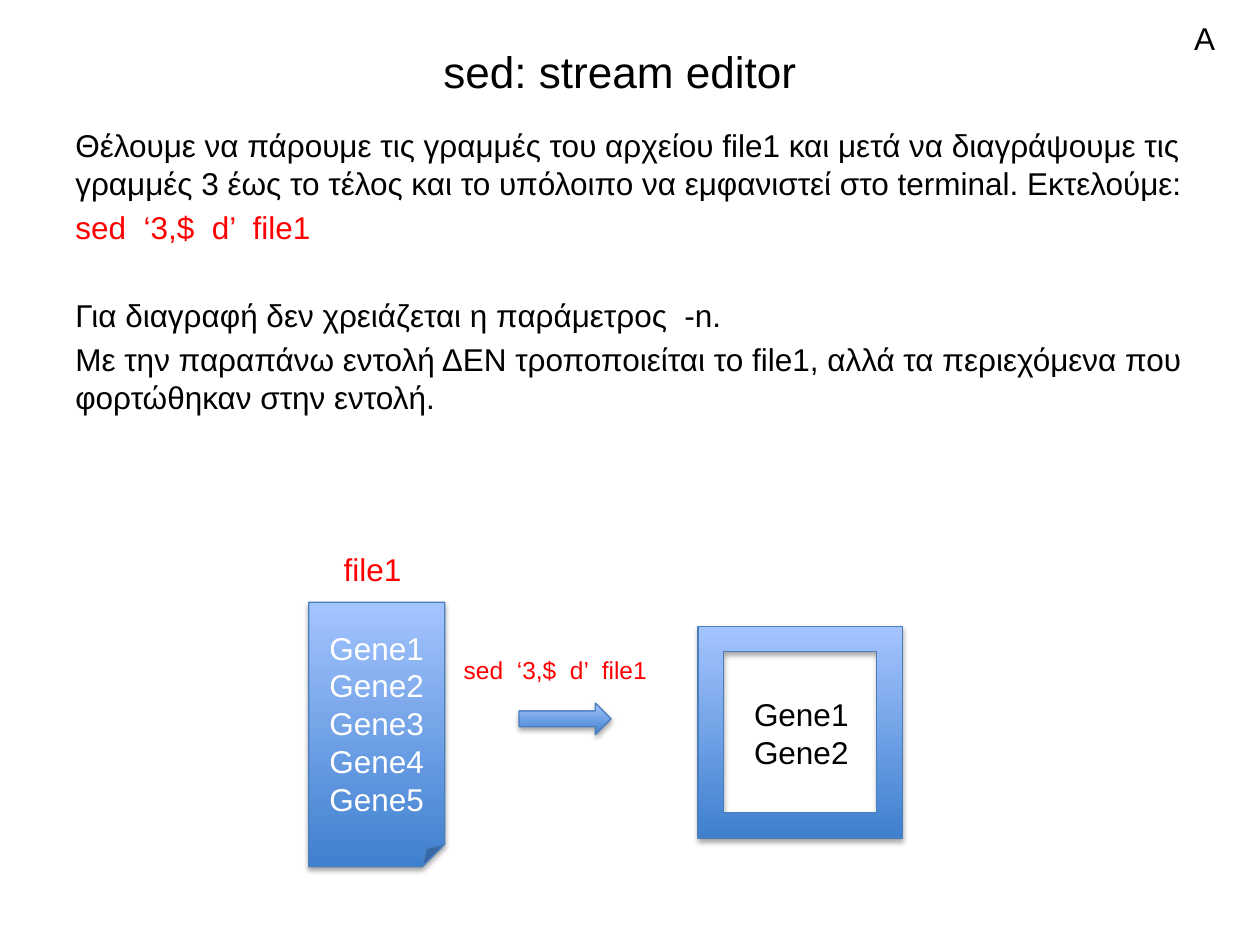
from dataclasses import dataclass

from lxml import etree
from pptx import Presentation
from pptx.dml.color import RGBColor
from pptx.enum.shapes import MSO_SHAPE
from pptx.enum.text import MSO_ANCHOR, PP_ALIGN
from pptx.oxml.ns import qn
from pptx.util import Inches, Pt

LEFT, CENTER = PP_ALIGN.LEFT, PP_ALIGN.CENTER
TOP, MIDDLE = MSO_ANCHOR.TOP, MSO_ANCHOR.MIDDLE
FOLDED, ARROW, FRAME = MSO_SHAPE.FOLDED_CORNER, MSO_SHAPE.RIGHT_ARROW, MSO_SHAPE.FRAME

FONT = "Arial"
COLS, ROWS = 100, 75
COLORS = {
    "black": "000000",
    "red": "FF0000",
    "white": "FFFFFF",
    "dark": "3F80CE",
    "light": "A4C4FF",
    "outline": "4B7EBC",
}
COMMAND = "sed  ‘3,$  d’  file1"
GENES = [f"Gene{n}" for n in range(1, 6)]
PARA_GAP = 3.6
SECTION_GAP = 29


@dataclass
class Box:
    col: float
    row: float
    cols: float
    rows: float


@dataclass
class Para:
    text: str
    color: str = "black"
    size: float = 18
    align: PP_ALIGN = LEFT
    before: float = 0


@dataclass
class Label:
    box: Box
    paras: list[Para]
    anchor: MSO_ANCHOR = TOP
    wrap: bool = True
    inset: float = 0.1


@dataclass
class Figure:
    kind: MSO_SHAPE
    box: Box
    paras: list[Para]


def gene_list(count: int, color: str) -> list[Para]:
    return [Para(g, color, align=CENTER) for g in GENES[:count]]


LABELS = [
    Label(Box(12, 3, 74.4, 5.2), [Para("sed: stream editor", size=25.2, align=CENTER)], MIDDLE),
    Label(Box(5, 9.5, 90, 26.7), [
        Para("Θέλουμε να πάρουμε τις γραμμές του αρχείου file1 και μετά να διαγράψουμε "
             "τις γραμμές 3 έως το τέλος και το υπόλοιπο να εμφανιστεί στο terminal. "
             "Εκτελούμε:"),
        Para(COMMAND, "red", before=PARA_GAP),
        Para("Για διαγραφή δεν χρειάζεται η παράμετρος  -n.", before=SECTION_GAP),
        Para("Με την παραπάνω εντολή ΔΕΝ τροποποιείται το file1, αλλά τα περιεχόμενα "
             "που φορτώθηκαν στην εντολή.", before=PARA_GAP),
    ]),
    Label(Box(35.3, 51.5, 17.2, 3.4), [Para(COMMAND, "red", 14)], wrap=False, inset=0.15),
    Label(Box(26.3, 43.2, 6.7, 4), [Para("file1", "red")], wrap=False),
    Label(Box(58.1, 54.7, 11, 7.1), gene_list(2, "black")),
    Label(Box(93.8, 1, 5, 4), [Para("Α")]),
]

FIGURES = [
    Figure(FOLDED, Box(24.5, 47.8, 10.8, 21), gene_list(5, "white")),
    Figure(ARROW, Box(41.2, 55.8, 7.3, 2.5), []),
    Figure(FRAME, Box(55.4, 49.7, 16.2, 16.8), []),
]


def rgb(name: str) -> RGBColor:
    return RGBColor.from_string(COLORS[name])


def place(prs, box: Box) -> tuple[int, int, int, int]:
    w, h = prs.slide_width / COLS, prs.slide_height / ROWS
    return int(box.col * w), int(box.row * h), int(box.cols * w), int(box.rows * h)


def write(tf, paras: list[Para]) -> None:
    for i, para in enumerate(paras):
        p = tf.add_paragraph() if i else tf.paragraphs[0]
        p.alignment = para.align
        if para.before:
            p.space_before = Pt(para.before)
        r = p.add_run()
        r.text = para.text
        r.font.name = FONT
        r.font.size = Pt(para.size)
        r.font.color.rgb = rgb(para.color)


def add_shadow(sp) -> None:
    sp.shadow.inherit = False
    effects = sp._element.spPr.find(qn("a:effectLst"))
    outer = etree.SubElement(effects, qn("a:outerShdw"), blurRad=str(Pt(3.1)),
                             dist=str(Pt(1.8)), dir="5400000", rotWithShape="0")
    color = etree.SubElement(outer, qn("a:srgbClr"), val=COLORS["black"])
    etree.SubElement(color, qn("a:alpha"), val="35000")


def add_label(prs, s, label: Label) -> None:
    tf = s.shapes.add_textbox(*place(prs, label.box)).text_frame
    tf.word_wrap = label.wrap
    tf.vertical_anchor = label.anchor
    tf.margin_left = Inches(label.inset)
    write(tf, label.paras)


def add_figure(prs, s, figure: Figure) -> None:
    sp = s.shapes.add_shape(figure.kind, *place(prs, figure.box))
    sp.fill.gradient()
    sp.fill.gradient_angle = 90
    for stop, name in zip(sp.fill.gradient_stops, ("dark", "light")):
        stop.color.rgb = rgb(name)
    sp.line.color.rgb = rgb("outline")
    sp.line.width = Pt(0.75)
    add_shadow(sp)
    sp.text_frame.vertical_anchor = MIDDLE
    write(sp.text_frame, figure.paras)


def main() -> None:
    prs = Presentation()
    prs.slide_width, prs.slide_height = Inches(10), Inches(7.5)
    s = prs.slides.add_slide(prs.slide_layouts[6])
    for figure in FIGURES:
        add_figure(prs, s, figure)
    for label in LABELS:
        add_label(prs, s, label)
    prs.save("out.pptx")


if __name__ == "__main__":
    main()
